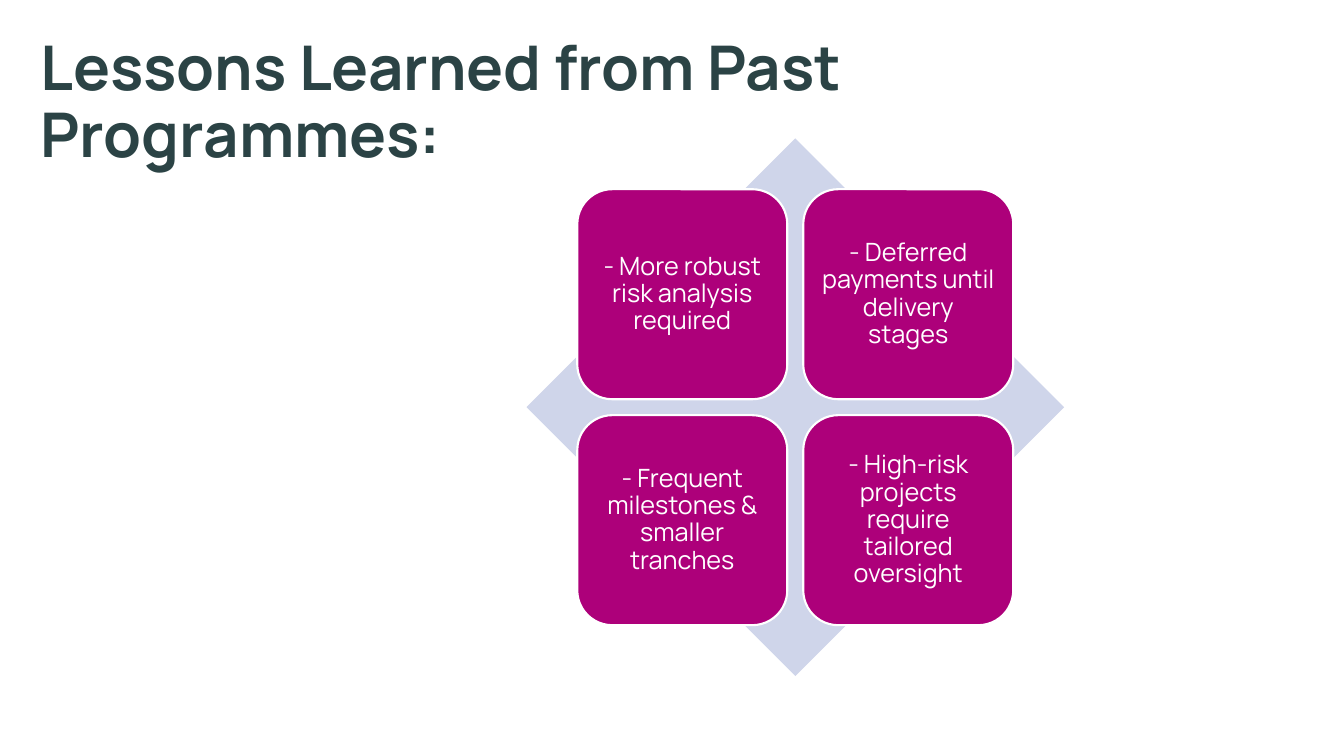
from itertools import product

from pptx import Presentation
from pptx.dml.color import RGBColor
from pptx.enum.shapes import MSO_SHAPE
from pptx.enum.text import MSO_ANCHOR, MSO_AUTO_SIZE, PP_ALIGN
from pptx.util import Inches, Pt

COLORS = {"title": "2B4345", "diamond": "CFD5EA", "card": "AD007A", "white": "FFFFFF"}
COLUMNS, ROWS = 160, 90
CENTER_COLUMN, CENTER_ROW = 94.68, 48.48
DIAMOND_SIZE, CARD_SIZE, CARD_GAP = 64, 25, 1.9
TITLE = "Lessons Learned from Past Programmes:"
LESSONS = [
    "- More robust risk analysis required",
    "- Deferred payments until delivery stages",
    "- Frequent milestones & smaller tranches",
    "- High-risk projects require tailored oversight",
]


class MatrixSlide:
    def __init__(self, deck, font_name):
        self.page = deck.slides.add_slide(deck.slide_layouts[5])
        self.font_name = font_name
        self.column = deck.slide_width / COLUMNS
        self.row = deck.slide_height / ROWS

    def place(self, left, top, width, height):
        return (
            round(left * self.column),
            round(top * self.row),
            round(width * self.column),
            round(height * self.row),
        )

    def add_text(self, box, text, size, color, align, bold=False):
        frame = box.text_frame
        frame.word_wrap = True
        frame.auto_size = MSO_AUTO_SIZE.NONE
        frame.vertical_anchor = MSO_ANCHOR.MIDDLE
        para = frame.paragraphs[0]
        para.alignment = align
        para.line_spacing = 0.9
        span = para.add_run()
        span.text = text
        span.font.name = self.font_name
        span.font.size = Pt(size)
        span.font.bold = bold
        span.font.color.rgb = RGBColor.from_string(COLORS[color])

    def title(self, text, left, top, width, height):
        box = self.page.shapes.title
        box.left, box.top, box.width, box.height = self.place(left, top, width, height)
        self.add_text(box, text, 44, "title", PP_ALIGN.LEFT, bold=True)

    def shape(self, kind, fill, left, top, size):
        box = self.page.shapes.add_shape(kind, *self.place(left, top, size, size))
        box.shadow.inherit = False
        box.fill.solid()
        box.fill.fore_color.rgb = RGBColor.from_string(COLORS[fill])
        box.line.fill.background()
        return box

    def diamond(self, center_column, center_row, size):
        self.shape(
            MSO_SHAPE.DIAMOND, "diamond", center_column - size / 2, center_row - size / 2, size
        )

    def card(self, text, left, top, size):
        box = self.shape(MSO_SHAPE.ROUNDED_RECTANGLE, "card", left, top, size)
        box.line.color.rgb = RGBColor.from_string(COLORS["white"])
        box.line.width = Pt(1.5)
        frame = box.text_frame
        frame.margin_left = frame.margin_right = Inches(0.07)
        frame.margin_top = frame.margin_bottom = Inches(0.07)
        self.add_text(box, text, 18, "white", PP_ALIGN.CENTER)


def main():
    deck = Presentation()
    deck.slide_width = Inches(13.33)
    deck.slide_height = Inches(7.5)
    matrix = MatrixSlide(deck, "Manrope")
    matrix.title(TITLE, 3.6, 3.72, 138, 17.4)
    matrix.diamond(CENTER_COLUMN, CENTER_ROW, DIAMOND_SIZE)
    pitch = CARD_SIZE + CARD_GAP
    first_left = CENTER_COLUMN - CARD_GAP / 2 - CARD_SIZE
    first_top = CENTER_ROW - CARD_GAP / 2 - CARD_SIZE
    for lesson, (row, column) in zip(LESSONS, product(range(2), repeat=2)):
        matrix.card(lesson, first_left + column * pitch, first_top + row * pitch, CARD_SIZE)
    deck.save("out.pptx")


if __name__ == "__main__":
    main()
